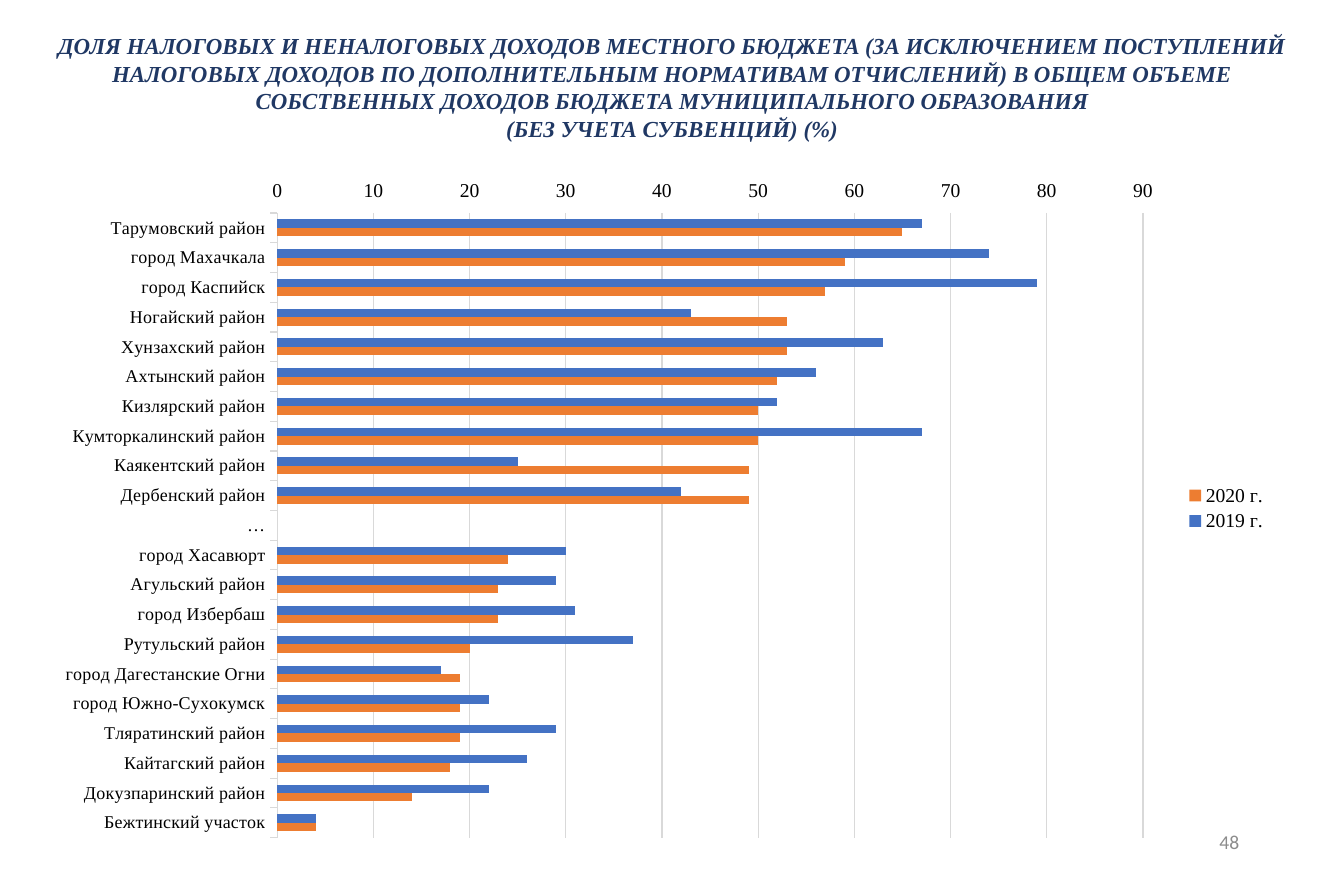
from dataclasses import dataclass

from lxml import etree
from pptx import Presentation
from pptx.chart.data import CategoryChartData
from pptx.dml.color import RGBColor
from pptx.enum.chart import XL_CHART_TYPE, XL_LEGEND_POSITION, XL_TICK_MARK
from pptx.enum.text import MSO_ANCHOR, MSO_AUTO_SIZE, PP_ALIGN
from pptx.oxml import parse_xml
from pptx.oxml.ns import nsdecls
from pptx.util import Cm, Pt

# Content
HEADING = [
    "ДОЛЯ НАЛОГОВЫХ И НЕНАЛОГОВЫХ ДОХОДОВ МЕСТНОГО БЮДЖЕТА (ЗА ИСКЛЮЧЕНИЕМ ПОСТУПЛЕНИЙ "
    "НАЛОГОВЫХ ДОХОДОВ ПО ДОПОЛНИТЕЛЬНЫМ НОРМАТИВАМ ОТЧИСЛЕНИЙ) В ОБЩЕМ ОБЪЕМЕ "
    "СОБСТВЕННЫХ ДОХОДОВ БЮДЖЕТА МУНИЦИПАЛЬНОГО ОБРАЗОВАНИЯ",
    "(БЕЗ УЧЕТА СУБВЕНЦИЙ) (%)",
]
PAGE_NUMBER = "48"
YEARS = ("2019 г.", "2020 г.")
SHARES = [
    ("Тарумовский район", 67, 65),
    ("город Махачкала", 74, 59),
    ("город Каспийск", 79, 57),
    ("Ногайский район", 43, 53),
    ("Хунзахский район", 63, 53),
    ("Ахтынский район", 56, 52),
    ("Кизлярский район", 52, 50),
    ("Кумторкалинский район", 67, 50),
    ("Каякентский район", 25, 49),
    ("Дербенский район", 42, 49),
    ("…", None, None),
    ("город Хасавюрт", 30, 24),
    ("Агульский район", 29, 23),
    ("город Избербаш", 31, 23),
    ("Рутульский район", 37, 20),
    ("город Дагестанские Огни", 17, 19),
    ("город Южно-Сухокумск", 22, 19),
    ("Тляратинский район", 29, 19),
    ("Кайтагский район", 26, 18),
    ("Докузпаринский район", 22, 14),
    ("Бежтинский участок", 4, 4),
]
PLOT_AREA = {"x": 0.19, "y": 0.07, "w": 0.7, "h": 0.91}  # shares of the chart frame


@dataclass(frozen=True)
class Theme:
    serif: str = "Times New Roman"
    sans: str = "Calibri"
    heading: RGBColor = RGBColor(0x20, 0x38, 0x64)
    text: RGBColor = RGBColor(0, 0, 0)
    muted: RGBColor = RGBColor(0x8C, 0x8C, 0x8C)
    grid: RGBColor = RGBColor(0xD9, 0xD9, 0xD9)
    years: tuple = (RGBColor(0x44, 0x72, 0xC4), RGBColor(0xED, 0x7D, 0x31))
    heading_size: Pt = Pt(14)
    body_size: Pt = Pt(12)
    district_size: Pt = Pt(11)
    hairline: Pt = Pt(0.75)


THEME = Theme()


def style_font(font, name, size, color):
    font.name, font.size = name, size
    font.color.rgb = color


def style_line(line):
    line.color.rgb = THEME.grid
    line.width = THEME.hairline


def add_heading(slide):
    heading = slide.shapes.title
    heading.left, heading.top, heading.width, heading.height = Cm(0.69), Cm(0.56), Cm(27.64), Cm(2.67)
    frame = heading.text_frame
    frame.word_wrap = True
    frame.auto_size = MSO_AUTO_SIZE.NONE
    frame.vertical_anchor = MSO_ANCHOR.TOP
    frame.text = "\n".join(HEADING)
    for paragraph in frame.paragraphs:
        paragraph.alignment = PP_ALIGN.CENTER
        style_font(paragraph.font, THEME.serif, THEME.heading_size, THEME.heading)
        paragraph.font.bold = paragraph.font.italic = True


def fix_plot_area(chart):
    plot_area = chart.plots[0]._element.getparent()
    for old in plot_area.findall("{*}layout"):
        plot_area.remove(old)
    layout = parse_xml(f"<c:layout {nsdecls('c')}><c:manualLayout/></c:layout>")
    settings = {"layoutTarget": "inner", "xMode": "edge", "yMode": "edge", **PLOT_AREA}
    for tag, value in settings.items():
        etree.SubElement(layout[0], f"{{{layout.nsmap['c']}}}{tag}", val=str(value))
    plot_area.insert(0, layout)


def add_shares_chart(slide):
    districts, *columns = zip(*SHARES)
    shares = CategoryChartData()
    shares.categories = districts
    for year, values in zip(YEARS, columns):
        shares.add_series(year, values)
    chart = slide.shapes.add_chart(
        XL_CHART_TYPE.BAR_CLUSTERED, Cm(0.91), Cm(3.56), Cm(26.7), Cm(14.81), shares
    ).chart
    chart.has_title = False
    style_font(chart.font, THEME.serif, THEME.body_size, THEME.text)

    # Bars
    bars = chart.plots[0]
    bars.gap_width, bars.overlap = 150, 0
    bars.vary_by_categories = False
    for series, color in zip(bars.series, THEME.years):
        series.format.fill.solid()
        series.format.fill.fore_color.rgb = color

    # Axes: districts run from the top down
    district_axis, percent_axis = chart.category_axis, chart.value_axis
    district_axis.reverse_order = True
    district_axis.major_tick_mark = XL_TICK_MARK.OUTSIDE
    style_line(district_axis.format.line)
    style_font(district_axis.tick_labels.font, THEME.serif, THEME.district_size, THEME.text)
    percent_axis.minimum_scale, percent_axis.maximum_scale = 0, 90
    percent_axis.major_unit = 10
    percent_axis.major_tick_mark = XL_TICK_MARK.OUTSIDE
    percent_axis.format.line.fill.background()
    style_line(percent_axis.major_gridlines.format.line)
    style_font(percent_axis.tick_labels.font, THEME.serif, THEME.body_size, THEME.text)

    # Legend
    chart.has_legend = True
    chart.legend.position = XL_LEGEND_POSITION.RIGHT
    chart.legend.include_in_layout = False
    style_font(chart.legend.font, THEME.serif, THEME.body_size, THEME.text)
    fix_plot_area(chart)


def add_page_number(slide):
    frame = slide.shapes.add_textbox(Cm(20.47), Cm(17.65), Cm(6.53), Cm(1.02)).text_frame
    frame.word_wrap = True
    frame.vertical_anchor = MSO_ANCHOR.MIDDLE
    frame.text = PAGE_NUMBER
    number = frame.paragraphs[0]
    number.alignment = PP_ALIGN.RIGHT
    style_font(number.font, THEME.sans, THEME.body_size, THEME.muted)


def main():
    deck = Presentation()
    deck.slide_width, deck.slide_height = Cm(29.01), Cm(19.05)
    slide = deck.slides.add_slide(deck.slide_layouts[5])
    add_shares_chart(slide)
    add_heading(slide)
    add_page_number(slide)
    deck.save("out.pptx")


if __name__ == "__main__":
    main()
